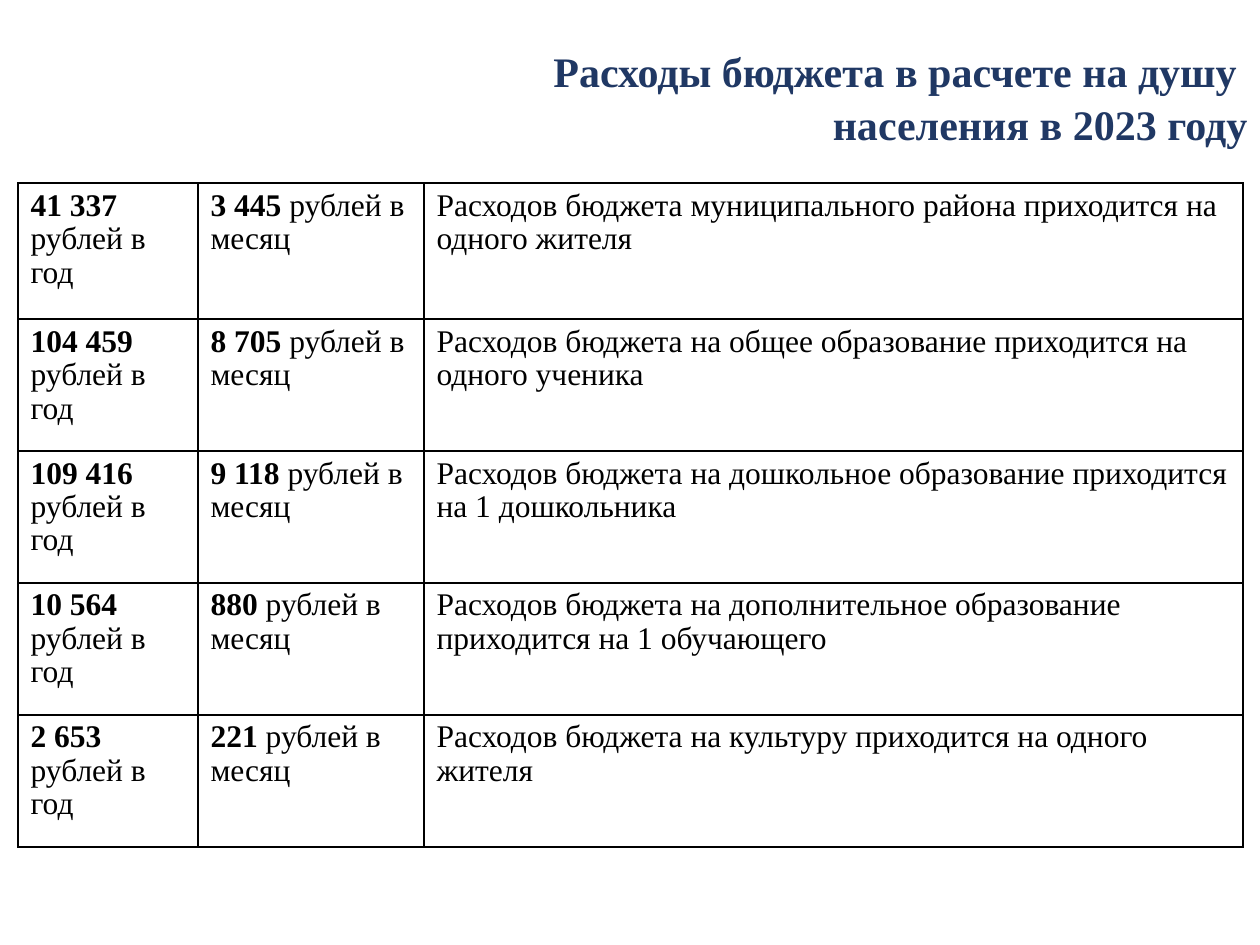
"""Builds a slide with a table of budget spending per person."""
from dataclasses import dataclass

from lxml import etree
from pptx import Presentation
from pptx.dml.color import RGBColor
from pptx.enum.text import MSO_ANCHOR, PP_ALIGN
from pptx.oxml.ns import qn
from pptx.util import Pt

RIGHT, LEFT = PP_ALIGN.RIGHT, PP_ALIGN.LEFT
TOP = MSO_ANCHOR.TOP
EMU_PER_INCH, PX_PER_INCH = 914400, 126


@dataclass(frozen=True)
class Theme:
    font: str = "Times New Roman"
    title: str = "203864"
    text: str = "000000"
    border: str = "000000"
    title_size: int = 24
    text_size: int = 18
    border_width: int = 1


@dataclass(frozen=True)
class Spending:
    per_year: str
    per_month: str
    purpose: str


THEME = Theme()
TITLE = ("Расходы бюджета в расчете на душу ", "населения в 2023 году")
SPENDING = (
    Spending("41 337", "3 445", "муниципального района приходится на одного жителя"),
    Spending("104 459", "8 705", "на общее образование приходится на одного ученика"),
    Spending("109 416", "9 118", "на дошкольное образование приходится на 1 дошкольника"),
    Spending("10 564", "880", "на дополнительное образование приходится на 1 обучающего"),
    Spending("2 653", "221", "на культуру приходится на одного жителя"),
)
COLUMNS = (180, 226, 819)
FIRST_ROW, ROW = 136, 132


def px(n: int) -> int:
    return round(n * EMU_PER_INCH / PX_PER_INCH)


def add_run(p, text: str, size: int, color: str, bold: bool = False) -> None:
    r = p.add_run()
    r.text = text
    r.font.name = THEME.font
    r.font.size = Pt(size)
    r.font.bold = bold
    r.font.color.rgb = RGBColor.from_string(color)


def add_title(s) -> None:
    sp = s.shapes.title
    sp.left, sp.top, sp.width, sp.height = px(44), px(37), px(1216), px(128)
    tf = sp.text_frame
    tf.word_wrap = True
    tf.vertical_anchor = TOP
    for i, line in enumerate(TITLE):
        p = tf.add_paragraph() if i else tf.paragraphs[0]
        p.alignment = RIGHT
        p.line_spacing = 1.05
        add_run(p, line, THEME.title_size, THEME.title, bold=True)


def set_borders(cell) -> None:
    tc_pr = cell._tc.get_or_add_tcPr()
    for i, side in enumerate(("a:lnL", "a:lnR", "a:lnT", "a:lnB")):
        ln = etree.Element(qn(side), w=str(Pt(THEME.border_width)))
        fill = etree.SubElement(ln, qn("a:solidFill"))
        etree.SubElement(fill, qn("a:srgbClr"), val=THEME.border)
        tc_pr.insert(i, ln)


def fill_cell(cell, amount: str, text: str) -> None:
    cell.fill.background()
    set_borders(cell)
    p = cell.text_frame.paragraphs[0]
    p.alignment = LEFT
    p.line_spacing = 0.96
    if amount:
        add_run(p, f"{amount} ", THEME.text_size, THEME.text, bold=True)
    add_run(p, text, THEME.text_size, THEME.text)


def add_spending_table(s) -> None:
    height = FIRST_ROW + ROW * (len(SPENDING) - 1)
    table = s.shapes.add_table(len(SPENDING), len(COLUMNS), px(18), px(183),
                               px(sum(COLUMNS)), px(height)).table
    table.first_row = table.horz_banding = False
    for column, width in zip(table.columns, COLUMNS):
        column.width = px(width)
    for i, (row, item) in enumerate(zip(table.rows, SPENDING)):
        row.height = px(ROW if i else FIRST_ROW)
        year, month, purpose = row.cells
        fill_cell(year, item.per_year, "рублей в год")
        fill_cell(month, item.per_month, "рублей в месяц")
        fill_cell(purpose, "", f"Расходов бюджета {item.purpose}")


def main() -> None:
    prs = Presentation()
    prs.slide_width, prs.slide_height = px(1260), px(945)
    s = prs.slides.add_slide(prs.slide_layouts[5])
    add_title(s)
    add_spending_table(s)
    prs.save("out.pptx")


if __name__ == "__main__":
    main()
